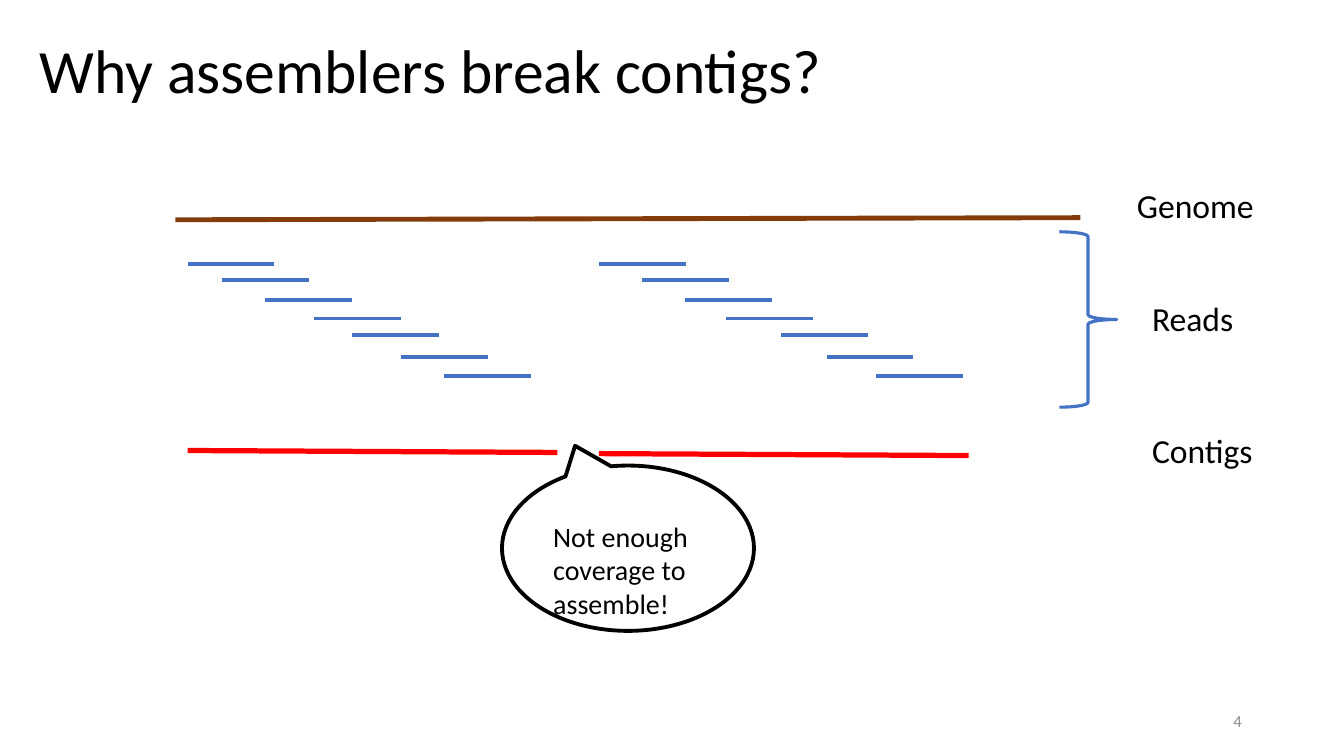
"""Build a slide on why assemblers break contigs."""
import dataclasses

import pptx
import pptx.dml.color
import pptx.enum.shapes
import pptx.enum.text
import pptx.oxml
import pptx.util

Pt = pptx.util.Pt
Shape = pptx.enum.shapes.MSO_SHAPE
Align = pptx.enum.text.PP_ALIGN
Anchor = pptx.enum.text.MSO_ANCHOR


@dataclasses.dataclass
class Theme:
    font: str = "Calibri"
    ink: str = "000000"
    gray: str = "8C8C8C"
    brown: str = "843C0B"
    blue: str = "4472C4"
    red: str = "FF0000"
    title: int = 44
    label: int = 24
    note: int = 20
    small: int = 12


class Deck:
    def __init__(self, theme):
        self.theme = theme
        self.file = pptx.Presentation()
        self.file.slide_width, self.file.slide_height = Pt(960), Pt(540)
        self.slide = self.file.slides.add_slide(self.file.slide_layouts[5])

    def color(self, code):
        return pptx.dml.color.RGBColor.from_string(code)

    def letter(self, shape, text, size, color, align, anchor):
        frame = shape.text_frame
        frame.text = text
        frame.word_wrap = True
        frame.vertical_anchor = anchor
        para = frame.paragraphs[0]
        para.alignment = align
        font = para.runs[0].font
        font.name, font.size = self.theme.font, Pt(size)
        font.color.rgb = self.color(color)
        return para

    def title(self, text, left, top, width, height):
        shape = self.slide.shapes.title
        shape.left, shape.top = Pt(left), Pt(top)
        shape.width, shape.height = Pt(width), Pt(height)
        para = self.letter(shape, text, self.theme.title, self.theme.ink,
                           Align.LEFT, Anchor.MIDDLE)
        para.line_spacing = 0.9

    def text(self, text, left, top, width, height, size, color=None,
             align=Align.LEFT, anchor=Anchor.TOP):
        box = self.slide.shapes.add_textbox(Pt(left), Pt(top), Pt(width), Pt(height))
        self.letter(box, text, size, color or self.theme.ink, align, anchor)

    def line(self, start, end, color, weight):
        points = [Pt(n) for n in (*start, *end)]
        kind = pptx.enum.shapes.MSO_CONNECTOR.STRAIGHT
        line = self.slide.shapes.add_connector(kind, *points)
        line.line.color.rgb = self.color(color)
        line.line.width = Pt(weight)
        props = line._element.spPr
        props.append(pptx.oxml.parse_xml(
            '<a:effectLst xmlns:a="http://schemas.openxmlformats.org/drawingml/2006/main"/>'))

    def shape(self, kind, left, top, width, height, color, weight, tweaks=()):
        shape = self.slide.shapes.add_shape(kind, Pt(left), Pt(top), Pt(width), Pt(height))
        for index, value in enumerate(tweaks):
            shape.adjustments[index] = value
        shape.shadow.inherit = False
        shape.fill.background()
        shape.line.color.rgb = self.color(color)
        shape.line.width = Pt(weight)


def main():
    theme = Theme()
    deck = Deck(theme)
    deck.title("Why assemblers break contigs?", 21, 0, 828, 104.4)

    deck.line((125.3, 157), (771.8, 155.5), theme.brown, 3.5)

    tops = (188.6, 200, 214.6, 227.5, 239, 255, 268.6)
    groups = ((134, 158.4, 189.4, 224.6, 251.3, 286.6, 317.5),
              (427.7, 458.6, 489.6, 518.4, 558, 590.4, 625.7))
    for lefts in groups:
        for left, top in zip(lefts, tops):
            deck.line((left, top), (left + 62, top), theme.blue, 2.75)

    for left, top in ((134, 321.8), (427.7, 324)):
        deck.line((left, top), (left + 264.2, top + 1.4), theme.red, 3.75)

    for name, left, top in (("Genome", 805, 128.9),
                            ("Reads", 815.8, 209.5),
                            ("Contigs", 815.8, 303.8)):
        deck.text(name, left, top, 172, 36, theme.label)
    deck.shape(Shape.RIGHT_BRACE, 756.7, 165.6, 41, 125.3, theme.blue, 2.25)

    deck.shape(Shape.OVAL_CALLOUT, 358.6, 332.6, 180, 118.1, theme.ink, 2.75,
               (-0.21, -0.62))
    deck.text("Not enough coverage to assemble!", 388, 367.2, 121, 80, theme.note)
    deck.text("4", 678.2, 500.4, 216, 28.8, theme.small, theme.gray,
              Align.RIGHT, Anchor.MIDDLE)
    deck.file.save("out.pptx")


if __name__ == "__main__":
    main()
